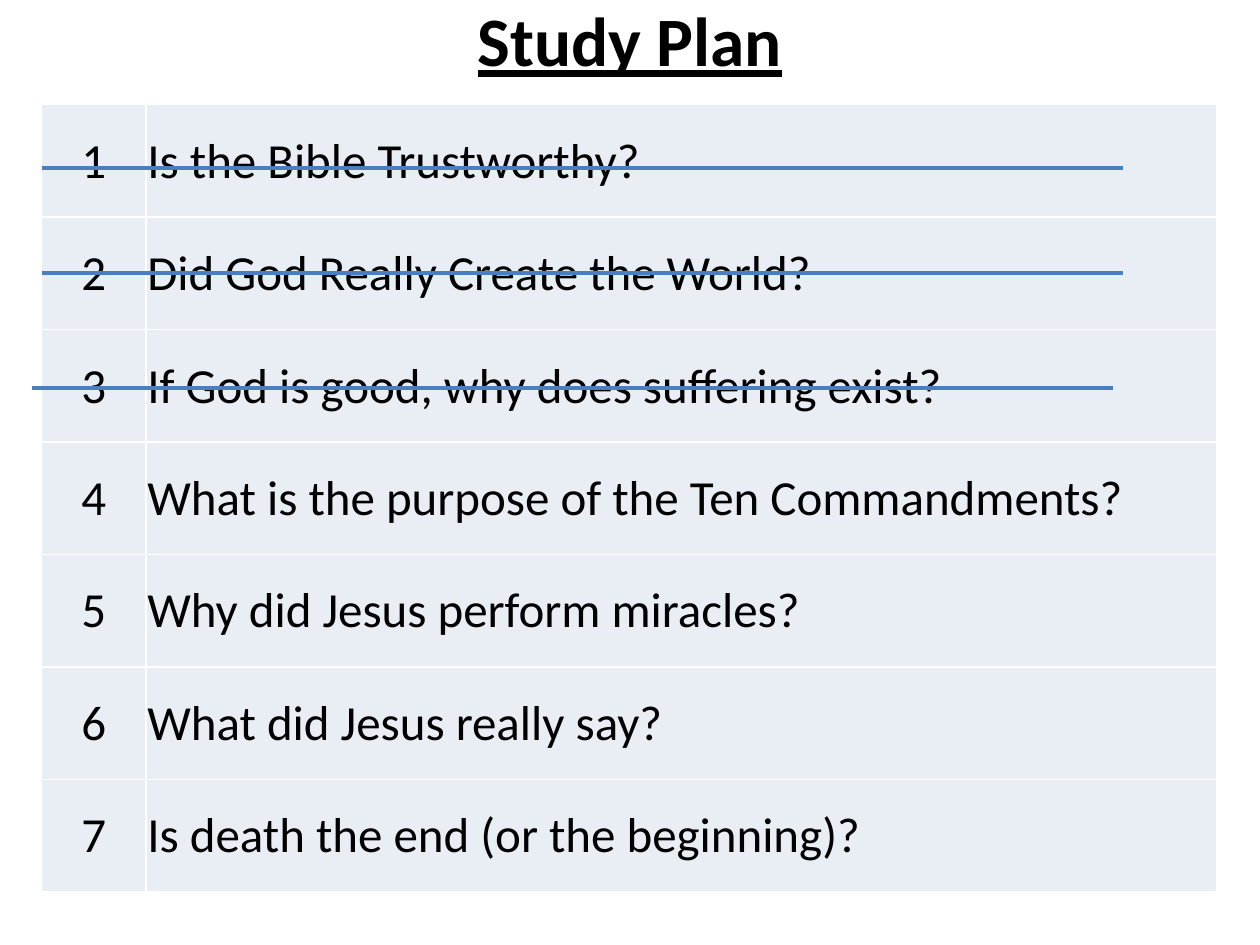
from dataclasses import dataclass
from lxml import etree
from pptx import Presentation
from pptx.dml.color import RGBColor
from pptx.enum.shapes import MSO_CONNECTOR
from pptx.enum.text import MSO_ANCHOR, PP_ALIGN
from pptx.oxml.ns import qn
from pptx.util import Inches, Pt

LEFT, CENTER = PP_ALIGN.LEFT, PP_ALIGN.CENTER
MIDDLE = MSO_ANCHOR.MIDDLE
STRAIGHT = MSO_CONNECTOR.STRAIGHT


@dataclass(frozen=True)
class Theme:
    font: str = "Calibri"
    text: str = "000000"
    cell: str = "E9EDF4"
    border: str = "FFFFFF"
    strike: str = "4B7EBC"
    title_size: float = 39.6
    body_size: float = 28
    border_width: float = 1
    strike_width: float = 2.25


theme = Theme()


def write(tf, text, size=theme.body_size, align=LEFT, bold=False, underline=False):
    tf.word_wrap = True
    p = tf.paragraphs[0]
    p.alignment = align
    r = p.add_run()
    r.text = text
    r.font.name = theme.font
    r.font.size = Pt(size)
    r.font.bold = bold
    r.font.underline = underline
    r.font.color.rgb = RGBColor.from_string(theme.text)


def add_borders(cell):
    tcPr = cell._tc.get_or_add_tcPr()
    for i, side in enumerate(("a:lnL", "a:lnR", "a:lnT", "a:lnB")):
        ln = etree.Element(qn(side), w=str(Pt(theme.border_width)))
        fill = etree.SubElement(ln, qn("a:solidFill"))
        etree.SubElement(fill, qn("a:srgbClr"), val=theme.border)
        tcPr.insert(i, ln)


topics = [
    "Is the Bible Trustworthy?",
    "Did God Really Create the World?",
    "If God is good, why does suffering exist?",
    "What is the purpose of the Ten Commandments?",
    "Why did Jesus perform miracles?",
    "What did Jesus really say?",
    "Is death the end (or the beginning)?",
]
strikes = [(0.33, 1.33), (0.33, 2.17), (0.25, 3.08)]
strike_length = 8.58

prs = Presentation()
prs.slide_width, prs.slide_height = Inches(10), Inches(7.5)
s = prs.slides.add_slide(prs.slide_layouts[6])

title = s.shapes.add_textbox(Inches(0.5), Inches(-0.08), Inches(9), Inches(0.78))
title.text_frame.vertical_anchor = MIDDLE
write(title.text_frame, "Study Plan", size=theme.title_size, align=CENTER,
      bold=True, underline=True)

table = s.shapes.add_table(len(topics), 2, Inches(0.33), Inches(0.83),
                           Inches(9.33), Inches(6.25)).table
table.first_row = False
table.horz_banding = False
table.columns[0].width = Inches(0.83)
table.columns[1].width = Inches(8.5)

for i, topic in enumerate(topics):
    for j, (text, align) in enumerate([(str(i + 1), CENTER), (topic, LEFT)]):
        cell = table.cell(i, j)
        cell.fill.solid()
        cell.fill.fore_color.rgb = RGBColor.from_string(theme.cell)
        cell.vertical_anchor = MIDDLE
        cell.margin_left = cell.margin_right = cell.margin_top = Inches(0.01)
        cell.margin_bottom = 0
        write(cell.text_frame, text, align=align)
        add_borders(cell)

for x, y in strikes:
    line = s.shapes.add_connector(STRAIGHT, Inches(x), Inches(y),
                                  Inches(x + strike_length), Inches(y))
    line.line.color.rgb = RGBColor.from_string(theme.strike)
    line.line.width = Pt(theme.strike_width)
    etree.SubElement(line._element.spPr, qn("a:effectLst"))

prs.save("out.pptx")
